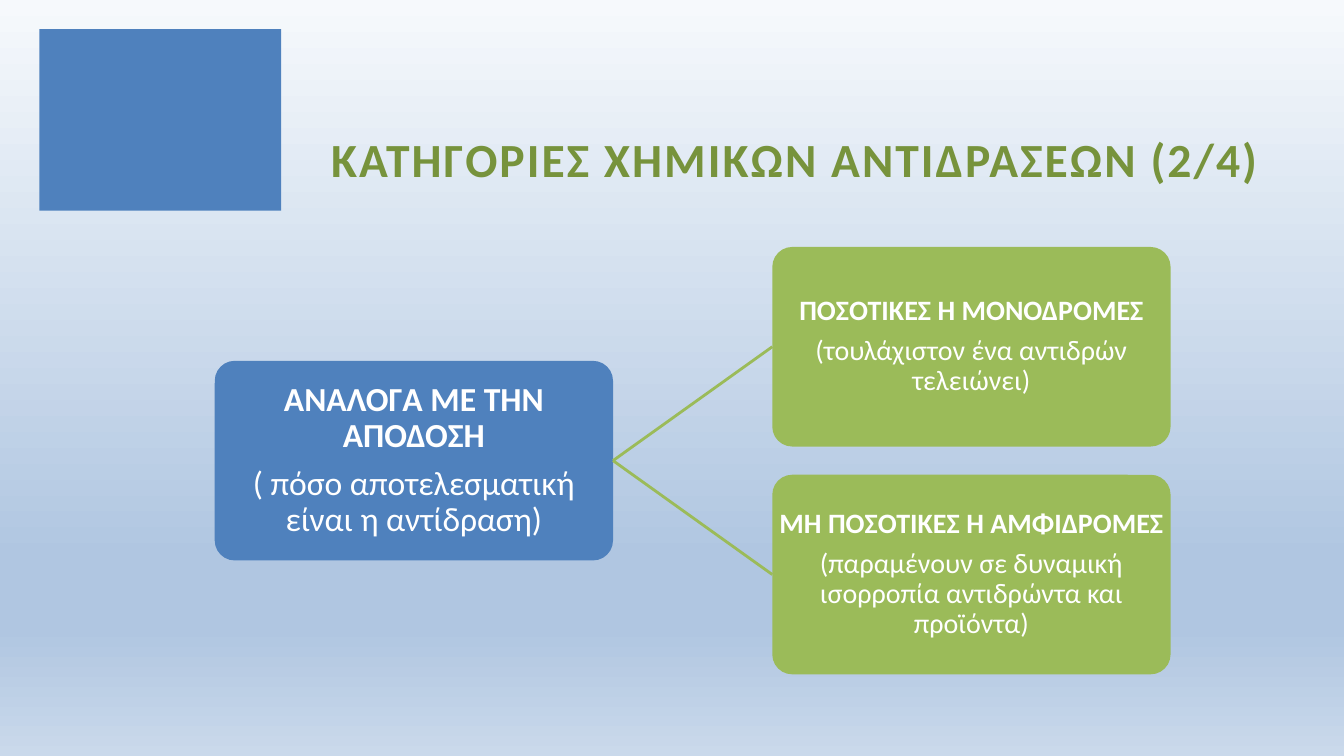
from copy import deepcopy

from pptx import Presentation
from pptx.dml.color import RGBColor as RGB
from pptx.enum.shapes import MSO_CONNECTOR as LINE, MSO_SHAPE as SHAPE
from pptx.enum.text import MSO_ANCHOR as ANCHOR, PP_ALIGN as ALIGN
from pptx.oxml.ns import qn
from pptx.oxml.xmlchemy import OxmlElement as Node
from pptx.util import Inches, Pt

BLUE = RGB(0x4F, 0x81, 0xBD)
LIME = RGB(0x9B, 0xBB, 0x59)
OLIVE = RGB(0x77, 0x93, 0x3C)
WHITE = RGB(0xFF, 0xFF, 0xFF)
SKY = [(0, RGB(0xF6, 0xF9, 0xFC)), (0.74, RGB(0xB0, 0xC6, 0xE1)),
       (0.83, RGB(0xB0, 0xC6, 0xE1)), (1, RGB(0xCA, 0xD9, 0xEB))]

WIDE, HIGH = 3.95, 1.98
ROOT = ("ΑΝΑΛΟΓΑ ΜΕ ΤΗΝ ΑΠΟΔΟΣΗ", "( πόσο αποτελεσματική είναι η αντίδραση)")
KINDS = [
    ("ΠΟΣΟΤΙΚΕΣ Ή ΜΟΝΟΔΡΟΜΕΣ", "(τουλάχιστον ένα αντιδρών τελειώνει)"),
    ("ΜΗ ΠΟΣΟΤΙΚΕΣ Ή ΑΜΦΙΔΡΟΜΕΣ",
     "(παραμένουν σε δυναμική ισορροπία αντιδρώντα και προϊόντα)"),
]


def style(item, **values):
    """Set each named attribute of the item."""
    for name, value in values.items():
        setattr(item, name, value)


def paint(slide):
    """Fill the background with the sky gradient from top to bottom."""
    fill = slide.background.fill
    fill.gradient()
    fill.gradient_angle = 270
    stops = slide.element.find(".//" + qn("a:gsLst"))
    for _ in range(len(SKY) - len(stops)):
        stops.append(deepcopy(stops[0]))
    for stop, (place, color) in zip(fill.gradient_stops, SKY):
        stop.position = place
        stop.color.rgb = color


def block(slide, kind, box, color):
    """Add a flat shape without outline or shadow."""
    shape = slide.shapes.add_shape(kind, *map(Inches, box))
    shape.shadow.inherit = False
    shape.fill.solid()
    shape.fill.fore_color.rgb = color
    shape.line.fill.background()
    return shape


def write(par, text, size, color, bold):
    """Write one centred run of text in the paragraph."""
    par.alignment = ALIGN.CENTER
    run = par.add_run()
    run.text = text
    style(run.font, name="Calibri", size=Pt(size), bold=bold)
    run.font.color.rgb = color
    return run


def header(slide, box):
    """Add the corner block and the title at the right of the box."""
    left, top, width, height = box
    block(slide, SHAPE.RECTANGLE, (left, top, 2.4, height), BLUE)
    place = (left + 2.75, top + 0.36, width - 2.75, 1.25)
    frame = slide.shapes.add_textbox(*map(Inches, place)).text_frame
    style(frame, word_wrap=True, vertical_anchor=ANCHOR.BOTTOM)
    run = write(frame.paragraphs[0], "ΚΑΤΗΓΟΡΙΕΣ ΧΗΜΙΚΩΝ ΑΝΤΙΔΡΑΣΕΩΝ (2/4)",
                34, OLIVE, True)
    run.font._element.set("spc", "150")


def card(slide, left, top, texts, size, color):
    """Add a rounded card with a bold heading and a plain note."""
    shape = block(slide, SHAPE.ROUNDED_RECTANGLE, (left, top, WIDE, HIGH), color)
    shape.adjustments[0] = 0.1
    frame = shape.text_frame
    edge = Inches(0.01)
    style(frame, word_wrap=True, vertical_anchor=ANCHOR.MIDDLE, margin_left=edge,
          margin_right=edge, margin_top=edge, margin_bottom=edge)
    frame.add_paragraph()
    for par, text, bold in zip(frame.paragraphs, texts, (True, False)):
        style(par, line_spacing=0.9, space_after=Pt(size * 0.35))
        write(par, text, size, WHITE, bold)


def link(slide, *ends):
    """Draw a branch between two points."""
    line = slide.shapes.add_connector(LINE.STRAIGHT, *map(Inches, ends))
    line.line.color.rgb = LIME
    line.line.width = Pt(2)
    line._element.spPr.append(Node("a:effectLst"))


def tree(slide, box):
    """Place the root at the left and its branches stacked at the right."""
    left, top, width, height = box
    mid = top + height / 2
    right = left + width - WIDE
    step = (height - HIGH) / (len(KINDS) - 1)
    card(slide, left, mid - HIGH / 2, ROOT, 24, BLUE)
    for row, texts in enumerate(KINDS):
        y = top + row * step
        link(slide, left + WIDE, mid, right, y + HIGH / 2)
        card(slide, right, y, texts, 20, LIME)


def main():
    """Build and save the slide."""
    deck = Presentation()
    style(deck, slide_width=Inches(13.33), slide_height=Inches(7.5))
    slide = deck.slides.add_slide(deck.slide_layouts[6])
    paint(slide)
    header(slide, (0.39, 0.29, 12.24, 1.8))
    tree(slide, (2.13, 2.45, 9.48, 4.24))
    deck.save("out.pptx")


if __name__ == "__main__":
    main()
